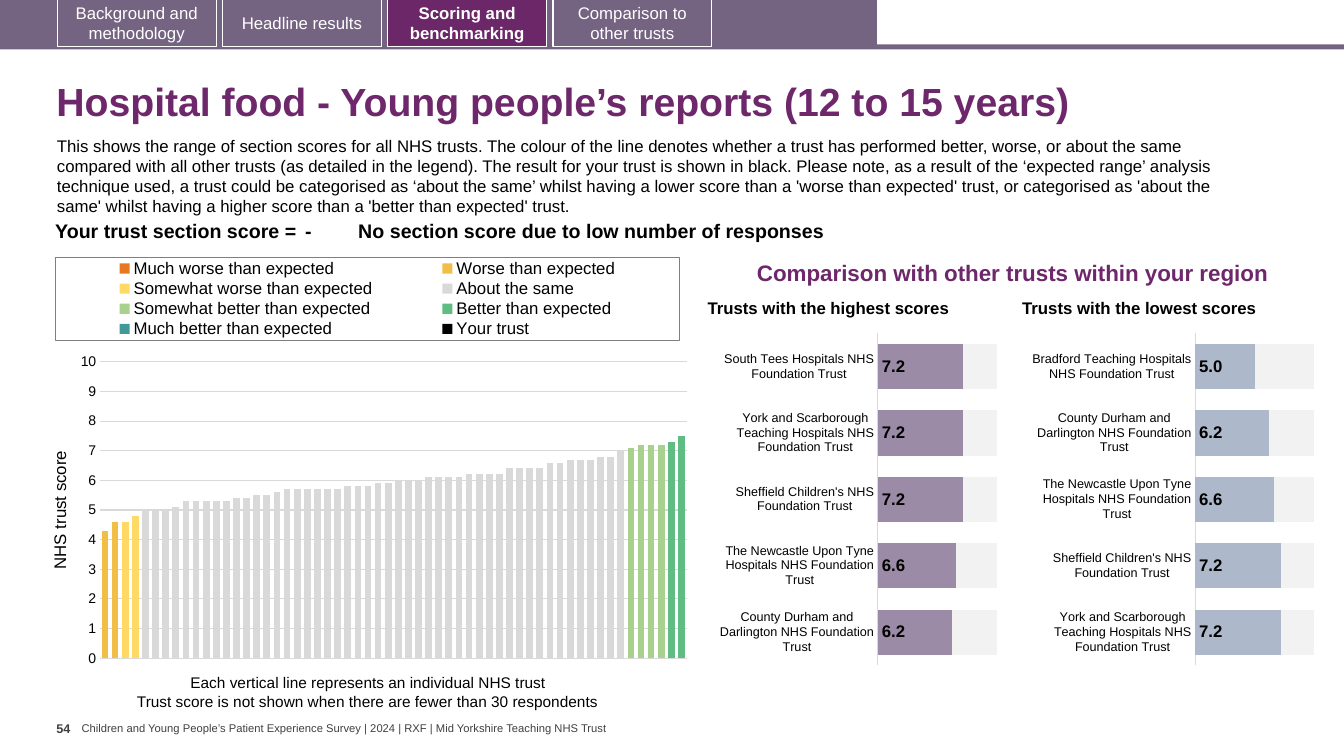
from copy import deepcopy
from dataclasses import dataclass

from lxml.etree import SubElement
from pptx import Presentation
from pptx.chart.data import CategoryChartData as ChartData
from pptx.dml.color import RGBColor
from pptx.enum.chart import XL_CHART_TYPE as ChartKind, XL_LABEL_POSITION as LabelPlace
from pptx.enum.chart import XL_LEGEND_POSITION as LegendPlace, XL_TICK_MARK as TickMark
from pptx.enum.shapes import MSO_SHAPE as Shape
from pptx.enum.text import MSO_ANCHOR as Anchor, PP_ALIGN as Align
from pptx.oxml import parse_xml
from pptx.oxml.ns import nsdecls, qn
from pptx.util import Pt

@dataclass(frozen=True)
class Theme:
    """Colours and type sizes of the slide."""
    font: str = "Arial"
    ink, white, footer = "000000", "FFFFFF", "404040"
    band, active, heading = "756382", "6B2768", "6D276A"
    grid, frame, rest = "D9D9D9", "7F7F7F", "F2F2F2"
    highest, lowest = "9C8BA7", "ADB9CA"
    title, section, score, body, note, axis, small, tiny = 28, 16, 14, 12, 11, 10, 9, 8

THEME = Theme()
TABS = ["Background and methodology", "Headline results",
        "Scoring and benchmarking", "Comparison to other trusts"]
ACTIVE_TAB = 2
INTRO = (
    "This shows the range of section scores for all NHS trusts. The colour of the line denotes "
    "whether a trust has performed better, worse, or about the same compared with all other trusts "
    "(as detailed in the legend). The result for your trust is shown in black. Please note, as a "
    "result of the ‘expected range’ analysis technique used, a trust could be categorised as ‘about "
    "the same’ whilst having a lower score than a 'worse than expected' trust, or categorised as "
    "'about the same' whilst having a higher score than a 'better than expected' trust.")
SCORE_CELLS = [("Your trust section score =", 189.4, 3, Align.RIGHT), ("-", 41, 3, Align.LEFT),
               ("No section score due to low number of responses", 611.3, 0, Align.LEFT)]
BANDS = [
    ("Much worse than expected", "E87722", []),
    ("Worse than expected", "F1BE48", [4.3, 4.6]),
    ("Somewhat worse than expected", "FFD966", [4.6, 4.8]),
    ("About the same", "D9D9D9", [
        5, 5, 5, 5.1, 5.3, 5.3, 5.3, 5.3, 5.3, 5.4, 5.4, 5.5, 5.5, 5.6, 5.7, 5.7,
        5.7, 5.7, 5.7, 5.7, 5.8, 5.8, 5.8, 5.9, 5.9, 6, 6, 6, 6.1, 6.1, 6.1, 6.1,
        6.2, 6.2, 6.2, 6.2, 6.4, 6.4, 6.4, 6.4, 6.6, 6.6, 6.7, 6.7, 6.7, 6.8, 6.8, 7]),
    ("Somewhat better than expected", "A9D18E", [7.1, 7.2, 7.2, 7.2]),
    ("Better than expected", "5FBD83", [7.3, 7.5]),
    ("Much better than expected", "419999", []),
    ("Your trust", "000000", [])]
TEES = "South Tees Hospitals NHS Foundation Trust"
YORK = "York and Scarborough Teaching Hospitals NHS Foundation Trust"
SHEFFIELD = "Sheffield Children's NHS Foundation Trust"
NEWCASTLE = "The Newcastle Upon Tyne Hospitals NHS Foundation Trust"
DURHAM = "County Durham and Darlington NHS Foundation Trust"
BRADFORD = "Bradford Teaching Hospitals NHS Foundation Trust"
HIGHEST = {TEES: 7.2, YORK: 7.2, SHEFFIELD: 7.2, NEWCASTLE: 6.6, DURHAM: 6.2}
LOWEST = {BRADFORD: 5, DURHAM: 6.2, NEWCASTLE: 6.6, SHEFFIELD: 7.2, YORK: 7.2}

def style_font(font, size, color=THEME.ink, bold=False):
    """Set typeface, size, colour and weight."""
    font.name, font.size, font.bold = THEME.font, Pt(size), bold
    font.color.rgb = RGBColor.from_string(color)

def write(frame, text, size, color=THEME.ink, bold=False, align=Align.LEFT,
          anchor=Anchor.TOP, insets=(7.2, 3.6), wrap=True, spacing=None):
    """Fill a text frame with one formatted paragraph."""
    frame.text, frame.word_wrap, frame.vertical_anchor = text, wrap, anchor
    frame.margin_left = frame.margin_right = Pt(insets[0])
    frame.margin_top = frame.margin_bottom = Pt(insets[1])
    para = frame.paragraphs[0]
    para.alignment, para.line_spacing = align, spacing
    style_font(para.runs[0].font, size, color, bold)

def add_text(page, bounds, text, size, **style):
    """Add a text box."""
    write(page.shapes.add_textbox(*map(Pt, bounds)).text_frame, text, size, **style)

def paint(fill, color):
    """Give a fill one solid colour."""
    fill.solid()
    fill.fore_color.rgb = RGBColor.from_string(color)

def draw_line(line, color):
    """Give a line its colour and the thin width."""
    line.color.rgb, line.width = RGBColor.from_string(color), Pt(0.75)

def add_box(page, bounds, color):
    """Add a filled rectangle without outline."""
    box = page.shapes.add_shape(Shape.RECTANGLE, *map(Pt, bounds))
    box.shadow.inherit = False
    paint(box.fill, color)
    box.line.fill.background()
    return box

def add_tabs(page):
    """Add the navigation band and its tabs."""
    add_box(page, (0, 31.7, 960, 3.6), THEME.band)
    add_box(page, (0, 0, 626.4, 33.8), THEME.band)
    for index, label in enumerate(TABS):
        active = index == ACTIVE_TAB
        tab = add_box(page, (41 + 118 * index, -0.5, 113.4, 33.8), THEME.active if active else THEME.band)
        draw_line(tab.line, THEME.white)
        write(tab.text_frame, label, THEME.body, THEME.white, active, Align.CENTER, Anchor.MIDDLE)

def add_score_table(page):
    """Add the one-row table with the trust's section score."""
    table = page.shapes.add_table(1, 3, Pt(25.5), Pt(154.8), Pt(841.7), Pt(22.3)).table
    table.first_row = table.horz_banding = False
    for index, (text, width, inset, align) in enumerate(SCORE_CELLS):
        table.columns[index].width = Pt(width)
        cell = table.cell(0, index)
        cell.fill.background()
        cell.margin_left = cell.margin_right = Pt(inset)
        cell.margin_top = cell.margin_bottom = Pt(3)
        cell.text = text
        para = cell.text_frame.paragraphs[0]
        para.alignment = align
        style_font(para.runs[0].font, THEME.score, bold=True)

def place_part(part, index, bounds, inner=False):
    """Give a chart part a manual layout in fractions of the chart."""
    for old in part.findall(qn("c:layout")):
        part.remove(old)
    layout = parse_xml(f"<c:layout {nsdecls('c')}><c:manualLayout/></c:layout>")
    settings = [("layoutTarget", "inner")] if inner else []
    for name, value in [*settings, ("xMode", "edge"), ("yMode", "edge"), *zip("xywh", bounds)]:
        SubElement(layout[0], qn(f"c:{name}")).set("val", str(value))
    part.insert(index, layout)

def add_chart(page, kind, bounds, data, colors, gap, plot_bounds):
    """Add a bar chart on a fixed scale from 0 to 10."""
    chart = page.shapes.add_chart(kind, *map(Pt, bounds), data).chart
    chart.has_title = chart.has_legend = False
    style_font(chart.font, THEME.axis)
    plot = chart.plots[0]
    plot.gap_width, plot.overlap, plot.vary_by_categories = gap, 100, False
    for series, color in zip(plot.series, colors):
        paint(series.format.fill, color)
    chart.value_axis.minimum_scale, chart.value_axis.maximum_scale = 0, 10
    place_part(chart.element.find(f".//{qn('c:plotArea')}"), 0, plot_bounds, True)
    return chart

def add_legend(chart):
    """Add the outlined legend above the columns."""
    chart.has_legend = True
    chart.legend.position, chart.legend.include_in_layout = LegendPlace.TOP, False
    style_font(chart.legend.font, THEME.body)
    part = chart.element.find(f".//{qn('c:legend')}")
    place_part(part, 1, (0.014, 0.02, 0.966, 0.195))
    part.find(qn("c:txPr")).addprevious(parse_xml(
        f'<c:spPr {nsdecls("c", "a")}><a:ln w="9525"><a:solidFill>'
        f'<a:srgbClr val="{THEME.frame}"/></a:solidFill></a:ln></c:spPr>'))

def move_last_series_right(chart):
    """Put the last series on a second, unlabelled value axis."""
    area = chart.element.find(f".//{qn('c:plotArea')}")
    bars, categories, values = (area.find(qn(f"c:{name}")) for name in ("barChart", "catAx", "valAx"))
    right_bars, right_categories, right_values = map(deepcopy, (bars, categories, values))
    bars.remove(bars.findall(qn("c:ser"))[-1])
    for series in right_bars.findall(qn("c:ser"))[:-1]:
        right_bars.remove(series)
    for axis_id, ref in zip(("5001", "5002"), right_bars.findall(qn("c:axId"))):
        ref.set("val", axis_id)
    for axis, own, other in ((right_categories, "5001", "5002"), (right_values, "5002", "5001")):
        axis.find(qn("c:axId")).set("val", own)
        axis.find(qn("c:crossAx")).set("val", other)
    for name in ("majorGridlines", "title"):
        right_values.remove(right_values.find(qn(f"c:{name}")))
    for name, value in (("axPos", "r"), ("tickLblPos", "none"), ("crosses", "max")):
        right_values.find(qn(f"c:{name}")).set("val", value)
    bars.addnext(right_bars)
    values.addnext(right_values)
    right_values.addnext(right_categories)

def add_score_chart(page):
    """Add the columns of all trusts, coloured by band."""
    total, start, data = sum(len(scores) for _, _, scores in BANDS), 0, ChartData()
    data.categories = [str(number + 1) for number in range(total)]
    for name, _, scores in BANDS:
        data.add_series(name, [None] * start + scores + [None] * (total - start - len(scores)))
        start += len(scores)
    chart = add_chart(page, ChartKind.COLUMN_CLUSTERED, (33.1, 177.8, 461.5, 303.1), data,
                      [color for _, color, _ in BANDS], 50, (0.083, 0.266, 0.908, 0.699))
    add_legend(chart)
    chart.category_axis.visible = False
    axis = chart.value_axis
    axis.major_unit, axis.major_tick_mark = 1, TickMark.NONE
    axis.format.line.fill.background()
    draw_line(axis.major_gridlines.format.line, THEME.grid)
    style_font(axis.tick_labels.font, THEME.axis)
    axis.axis_title.text_frame.text = "NHS trust score"
    style_font(axis.axis_title.text_frame.paragraphs[0].runs[0].font, THEME.body)
    move_last_series_right(chart)

def add_region_chart(page, left, plot_left, heading_left, heading, scores, color):
    """Add a heading and the bars of five trusts in the region."""
    add_text(page, (heading_left, 211, 204, 16.5), heading, THEME.body, bold=True,
             anchor=Anchor.BOTTOM, insets=(0, 0), spacing=0.9)
    data = ChartData(number_format="0.0")
    data.categories = list(scores)
    data.add_series("Series 1", list(scores.values()))
    data.add_series("Series 2", [round(10 - score, 1) for score in scores.values()])
    chart = add_chart(page, ChartKind.BAR_STACKED, (left, 233.3, 207, 247), data,
                      [color, THEME.rest], 47, (plot_left, 0.02, 0.41, 0.96))
    chart.value_axis.visible = chart.value_axis.has_major_gridlines = False
    axis = chart.category_axis
    axis.reverse_order, axis.major_tick_mark = True, TickMark.NONE
    draw_line(axis.format.line, THEME.grid)
    style_font(axis.tick_labels.font, THEME.small)
    labels = chart.plots[0].series[0].data_labels
    labels.show_value, labels.position = True, LabelPlace.INSIDE_BASE
    labels.number_format, labels.number_format_is_linked = "0.0", False
    style_font(labels.font, THEME.body, bold=True)

def main():
    """Build the slide and save it."""
    deck = Presentation()
    deck.slide_width, deck.slide_height = Pt(960), Pt(540)
    page = deck.slides.add_slide(deck.slide_layouts[5])
    add_tabs(page)
    title = page.shapes.title
    title.left, title.top, title.width, title.height = map(Pt, (33.1, 48.2, 899.3, 51.8))
    write(title.text_frame, "Hospital food - Young people’s reports (12 to 15 years)", THEME.title,
          THEME.heading, True, anchor=Anchor.MIDDLE, spacing=0.9)
    add_text(page, (33.6, 93.1, 873.4, 65.5), INTRO, THEME.body)
    add_score_table(page)
    add_score_chart(page)
    for bounds, note in (
            ((128.9, 477.4, 270, 20.9), "Each vertical line represents an individual NHS trust"),
            ((90.7, 491, 346.3, 20.9), "Trust score is not shown when there are fewer than 30 respondents")):
        add_text(page, bounds, note, THEME.note, wrap=False)
    add_text(page, (540.7, 167.8, 393.8, 36.7), "Comparison with other trusts within your region", THEME.section,
             color=THEME.heading, bold=True, anchor=Anchor.BOTTOM, insets=(0, 0), spacing=0.9)
    add_region_chart(page, 733.7, 0.58, 730.1, "Trusts with the lowest scores", LOWEST, THEME.lowest)
    add_region_chart(page, 511.2, 0.56, 505.4, "Trusts with the highest scores", HIGHEST, THEME.highest)
    add_text(page, (40.3, 511.2, 18, 28.8), "54", THEME.small, color=THEME.footer, bold=True,
             insets=(0, 3.6), wrap=False)
    add_text(page, (58.3, 515.5, 383, 9.4), "Children and Young People’s Patient Experience Survey | 2024 | "
             "RXF | Mid Yorkshire Teaching NHS Trust", THEME.tiny, color=THEME.footer,
             anchor=Anchor.MIDDLE, insets=(0, 0), wrap=False)
    deck.save("out.pptx")

if __name__ == "__main__":
    main()
